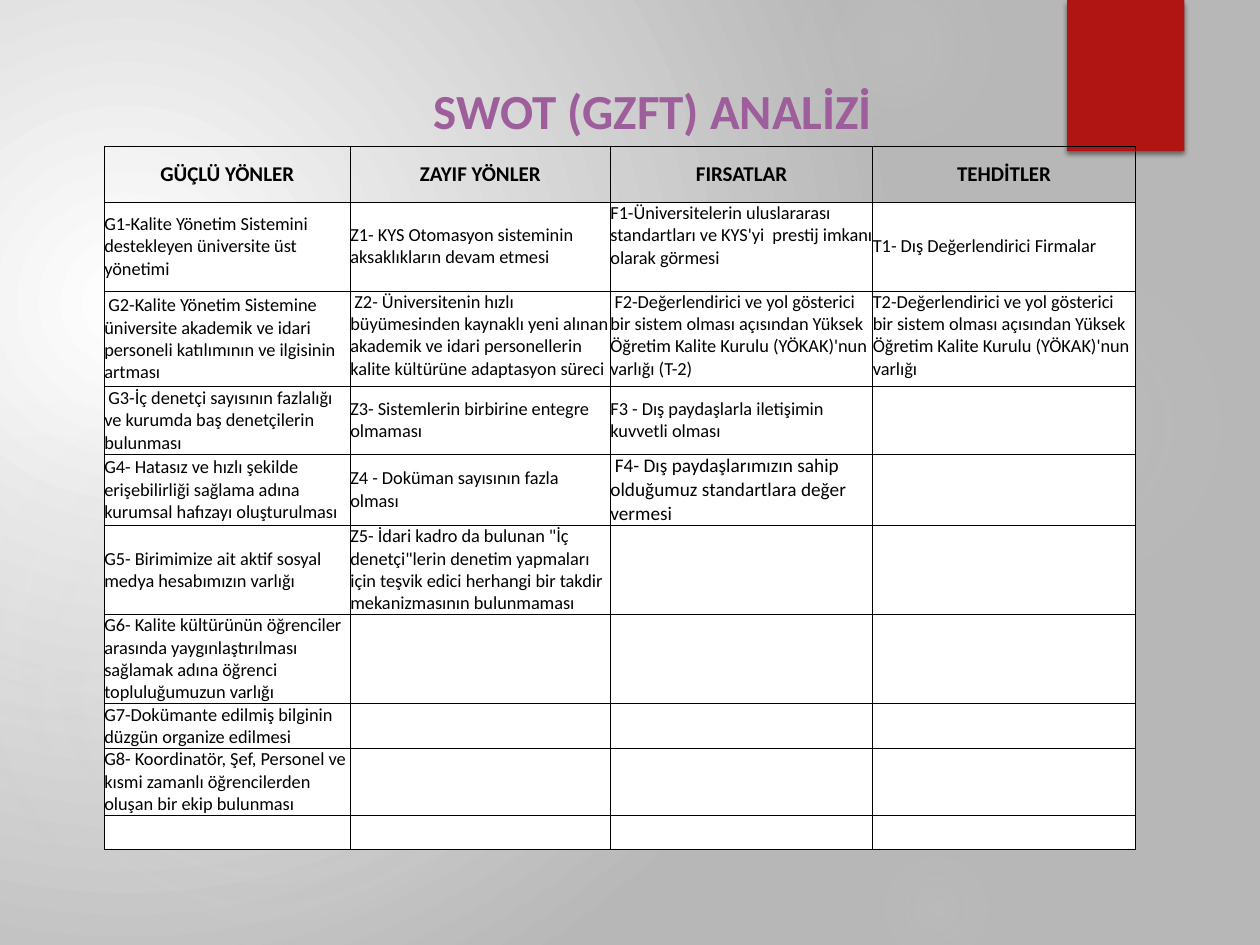
from dataclasses import dataclass

from lxml.etree import SubElement
from pptx import Presentation
from pptx.dml.color import RGBColor
from pptx.enum.shapes import MSO_SHAPE
from pptx.enum.text import MSO_ANCHOR, PP_ALIGN
from pptx.oxml import parse_xml
from pptx.oxml.ns import nsdecls, qn
from pptx.util import Pt


@dataclass(frozen=True)
class Theme:
    font: str = "Calibri"
    title_size: float = 28
    header_size: float = 12
    body_size: float = 10.5
    large_size: float = 11
    border_width: float = 0.5
    title: str = "9E5E9B"
    ink: str = "000000"
    paper: str = "FFFFFF"
    backdrop: str = "B7B7B7"
    glow: str = "D9D9D9"
    ribbon: str = "B01513"


THEME = Theme()
TITLE = "SWOT (GZFT) ANALİZİ"
TITLE_BOX = (199.5, 42.5, 347, 41)
RIBBON_BOX = (609.8, 0, 67, 86.4)
TABLE_ORIGIN = (59.6, 83.5)
COLUMN_WIDTHS = [140.6, 148.6, 150, 150]
ROW_HEIGHTS = [32, 50.8, 54.8, 38.4, 40, 50.3, 50.3, 25.6, 37.8, 19.4]
SWOT = {
    "GÜÇLÜ YÖNLER": [
        "G1-Kalite Yönetim Sistemini destekleyen üniversite üst yönetimi",
        " G2-Kalite Yönetim Sistemine üniversite akademik ve idari personeli katılımının ve ilgisinin artması",
        " G3-İç denetçi sayısının fazlalığı ve kurumda baş denetçilerin bulunması",
        "G4- Hatasız ve hızlı şekilde erişebilirliği sağlama adına kurumsal hafızayı oluşturulması",
        "G5- Birimimize ait aktif sosyal medya hesabımızın varlığı",
        "G6- Kalite kültürünün öğrenciler arasında yaygınlaştırılması sağlamak adına öğrenci topluluğumuzun varlığı",
        "G7-Dokümante edilmiş bilginin düzgün organize edilmesi",
        "G8- Koordinatör, Şef, Personel ve kısmi zamanlı öğrencilerden oluşan bir ekip bulunması",
    ],
    "ZAYIF YÖNLER": [
        "Z1- KYS Otomasyon sisteminin aksaklıkların devam etmesi",
        " Z2- Üniversitenin hızlı büyümesinden kaynaklı yeni alınan akademik ve idari personellerin kalite kültürüne adaptasyon süreci",
        "Z3- Sistemlerin birbirine entegre olmaması",
        "Z4 - Doküman sayısının fazla olması",
        "Z5- İdari kadro da bulunan \"İç denetçi\"lerin denetim yapmaları için teşvik edici herhangi bir takdir mekanizmasının bulunmaması",
    ],
    "FIRSATLAR": [
        "F1-Üniversitelerin uluslararası standartları ve KYS'yi  prestij imkanı olarak görmesi",
        " F2-Değerlendirici ve yol gösterici bir sistem olması açısından Yüksek Öğretim Kalite Kurulu (YÖKAK)'nun varlığı (T-2)",
        "F3 - Dış paydaşlarla iletişimin kuvvetli olması",
        " F4- Dış paydaşlarımızın sahip olduğumuz standartlara değer vermesi",
    ],
    "TEHDİTLER": [
        "T1- Dış Değerlendirici Firmalar",
        "T2-Değerlendirici ve yol gösterici bir sistem olması açısından Yüksek Öğretim Kalite Kurulu (YÖKAK)'nun varlığı",
    ],
}
TOP_ANCHORED = {(1, 2), (2, 1), (2, 2), (2, 3)}
LARGE_CELL = (4, 2)
GLOWS = [
    (496, 131.8, 221.8, [(0, 7), (36, 6), (69, 0)]),
    (447.8, -36, 126, [(0, 14), (36, 7), (73, 0)]),
    (496, 480.2, 77.8, [(0, 9), (36, 5), (66, 0)]),
    (-12.2, 210.2, 329.8, [(0, 11), (36, 10), (75, 0)]),
    (-66.2, 228.2, 185.8, [(0, 8), (36, 8), (72, 0)]),
]


def points(values):
    return [Pt(value) for value in values]


def radial_fill(fill, element, stops, focus):
    fill.gradient()
    stop_xml = "".join(
        f'<a:gs pos="{position * 1000}"><a:srgbClr val="{color}">'
        f'<a:alpha val="{opacity * 1000}"/></a:srgbClr></a:gs>'
        for position, color, opacity in stops
    )
    edges = " ".join(f'{side}="{value * 1000}"' for side, value in zip("ltrb", focus))
    gradient = parse_xml(
        f'<a:gradFill {nsdecls("a")} rotWithShape="1"><a:gsLst>{stop_xml}</a:gsLst>'
        f'<a:path path="circle"><a:fillToRect {edges}/></a:path></a:gradFill>'
    )
    default = next(element.iter(qn("a:gradFill")))
    default.getparent().replace(default, gradient)


def add_plain_shape(slide, kind, box):
    shape = slide.shapes.add_shape(kind, *points(box))
    shape.shadow.inherit = False
    shape.line.fill.background()
    return shape


def add_backdrop(slide):
    stops = [(0, THEME.paper, 100), (100, THEME.backdrop, 100)]
    radial_fill(slide.background.fill, slide.element, stops, (45, 65, 125, 100))
    for left, top, size, fades in GLOWS:
        glow = add_plain_shape(slide, MSO_SHAPE.OVAL, (left, top, size, size))
        stops = [(position, THEME.glow, opacity) for position, opacity in fades]
        radial_fill(glow.fill, glow.element, stops, (50, 50, 50, 50))


def add_ribbon(slide):
    ribbon = add_plain_shape(slide, MSO_SHAPE.RECTANGLE, RIBBON_BOX)
    ribbon.fill.solid()
    ribbon.fill.fore_color.rgb = RGBColor.from_string(THEME.ribbon)
    effects = ribbon.element.spPr.find(qn("a:effectLst"))
    shadow = SubElement(effects, qn("a:outerShdw"), blurRad=str(Pt(3)), dist=str(Pt(2)), dir="5400000")
    color = SubElement(shadow, qn("a:srgbClr"), val=THEME.ink)
    SubElement(color, qn("a:alpha"), val="45000")


def style_paragraph(paragraph, size, color, bold, alignment):
    paragraph.alignment = alignment
    font = paragraph.font
    font.name, font.size, font.bold = THEME.font, Pt(size), bold
    font.color.rgb = RGBColor.from_string(color)


def place_title(slide):
    title = slide.shapes.title
    title.left, title.top, title.width, title.height = points(TITLE_BOX)
    title.text_frame.text = TITLE
    title.text_frame.vertical_anchor = MSO_ANCHOR.MIDDLE
    style_paragraph(title.text_frame.paragraphs[0], THEME.title_size, THEME.title, True, PP_ALIGN.CENTER)
    slide.shapes.element.append(title.element)


def add_borders(cell):
    properties = cell._tc.get_or_add_tcPr()
    for side in ("lnL", "lnR", "lnT", "lnB"):
        line = SubElement(properties, qn(f"a:{side}"), w=str(Pt(THEME.border_width)))
        SubElement(SubElement(line, qn("a:solidFill")), qn("a:srgbClr"), val=THEME.ink)


def fill_cell(cell, position, text):
    is_header = position[0] == 0
    add_borders(cell)
    cell.margin_left = cell.margin_right = cell.margin_top = cell.margin_bottom = 0
    cell.vertical_anchor = MSO_ANCHOR.TOP if position in TOP_ANCHORED else MSO_ANCHOR.MIDDLE
    if is_header:
        cell.fill.background()
        size = THEME.header_size
    else:
        cell.fill.solid()
        cell.fill.fore_color.rgb = RGBColor.from_string(THEME.paper)
        size = THEME.large_size if position == LARGE_CELL else THEME.body_size
    if text:
        cell.text_frame.text = text
    alignment = PP_ALIGN.CENTER if is_header else PP_ALIGN.LEFT
    style_paragraph(cell.text_frame.paragraphs[0], size, THEME.ink, is_header, alignment)


def add_swot_table(slide):
    box = (*TABLE_ORIGIN, sum(COLUMN_WIDTHS), sum(ROW_HEIGHTS))
    table = slide.shapes.add_table(len(ROW_HEIGHTS), len(COLUMN_WIDTHS), *points(box)).table
    table.first_row = table.horz_banding = False
    for row, height in zip(table.rows, ROW_HEIGHTS):
        row.height = Pt(height)
    for column_index, (heading, items) in enumerate(SWOT.items()):
        table.columns[column_index].width = Pt(COLUMN_WIDTHS[column_index])
        texts = [heading, *items]
        for row_index in range(len(ROW_HEIGHTS)):
            text = texts[row_index] if row_index < len(texts) else ""
            fill_cell(table.cell(row_index, column_index), (row_index, column_index), text)


def main():
    """Build the SWOT analysis slide."""
    presentation = Presentation()
    presentation.slide_width, presentation.slide_height = Pt(720), Pt(540)
    slide = presentation.slides.add_slide(presentation.slide_layouts[5])
    add_backdrop(slide)
    add_ribbon(slide)
    place_title(slide)
    add_swot_table(slide)
    presentation.save("out.pptx")


if __name__ == "__main__":
    main()
